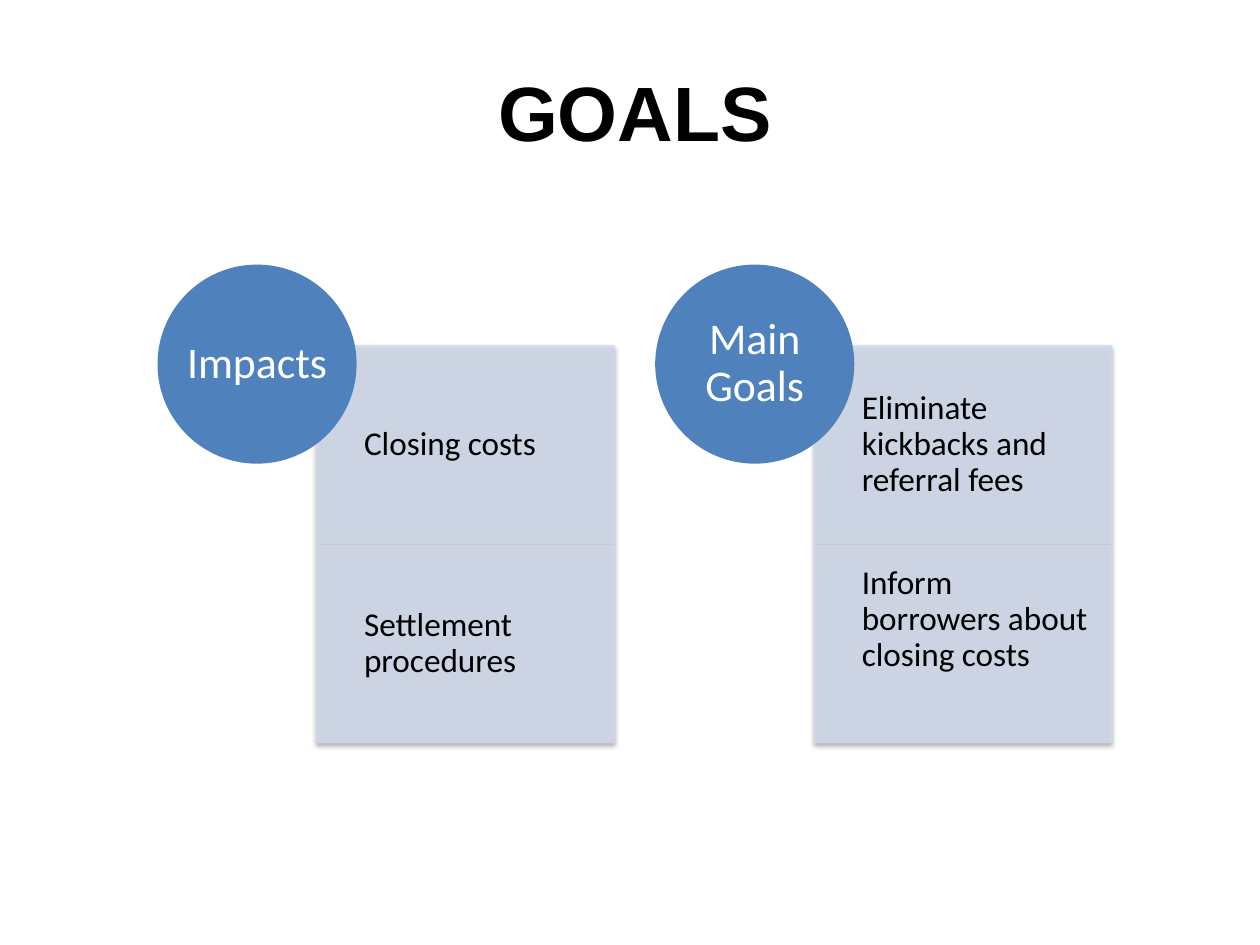
from dataclasses import dataclass

from lxml import etree
from pptx import Presentation
from pptx.dml.color import RGBColor
from pptx.enum import shapes, text
from pptx.oxml import ns
from pptx.util import Inches, Pt

BLACK = RGBColor(0x00, 0x00, 0x00)
WHITE = RGBColor(0xFF, 0xFF, 0xFF)
BLUE = RGBColor(0x4F, 0x81, 0xBD)
PALE_BLUE = RGBColor(0xD0, 0xD8, 0xE8)

CIRCLE_TOP = 2.1
CIRCLE_SIZE = 1.58
CARD_OFFSET = 1.26
CARD_TOP = 2.74
CARD_W, CARD_H = 2.37, 1.58
FIRST_LEFT, COLUMN_STEP = 1.25, 3.95


@dataclass
class Card:
    label: str
    bottom_inset: float = 0.15


@dataclass
class Column:
    heading: str
    cards: list[Card]


COLUMNS = [
    Column("Impacts", [Card("Closing costs"), Card("Settlement procedures")]),
    Column("Main Goals", [
        Card("Eliminate kickbacks and referral fees"),
        Card("Inform borrowers about closing costs", bottom_inset=0.53),
    ]),
]


def write(sp, words: str, *, size: float, color: RGBColor = BLACK,
          font: str = "Calibri", bold: bool = False,
          align=text.PP_ALIGN.CENTER, spacing: float = 0.9,
          insets: tuple = (0, 0, 0, 0)) -> None:
    """Fill a shape with one paragraph; insets are left, top, right, bottom."""
    tf = sp.text_frame
    tf.word_wrap = True
    tf.vertical_anchor = text.MSO_ANCHOR.MIDDLE
    (tf.margin_left, tf.margin_top,
     tf.margin_right, tf.margin_bottom) = map(Inches, insets)
    p = tf.paragraphs[0]
    p.alignment = align
    p.line_spacing = spacing
    r = p.add_run()
    r.text = words
    r.font.name = font
    r.font.size = Pt(size)
    r.font.bold = bold
    r.font.color.rgb = color


def add_filled(s, kind, left: float, top: float, width: float, height: float,
               color: RGBColor):
    sp = s.shapes.add_shape(kind, Inches(left), Inches(top),
                            Inches(width), Inches(height))
    sp.shadow.inherit = False
    sp.fill.solid()
    sp.fill.fore_color.rgb = color
    sp.line.fill.background()
    return sp


def set_alpha(color_element, percent: int) -> None:
    alpha = etree.SubElement(color_element, ns.qn("a:alpha"))
    alpha.set("val", str(percent * 1000))


def add_drop_shadow(sp) -> None:
    effects = sp._element.spPr.find(ns.qn("a:effectLst"))
    shadow = etree.SubElement(
        effects, ns.qn("a:outerShdw"), blurRad=str(Pt(3.1)),
        dist=str(Pt(1.8)), dir=str(90 * 60000), rotWithShape="0")
    color = etree.SubElement(shadow, ns.qn("a:srgbClr"), val=str(BLACK))
    set_alpha(color, 35)


def draw_card(s, card: Card, left: float, top: float) -> None:
    sp = add_filled(s, shapes.MSO_SHAPE.RECTANGLE, left, top,
                    CARD_W, CARD_H, PALE_BLUE)
    set_alpha(sp._element.spPr.find(".//" + ns.qn("a:srgbClr")), 90)
    add_drop_shadow(sp)
    write(sp, card.label, size=19, align=text.PP_ALIGN.LEFT,
          insets=(0.38, 0.15, 0.15, card.bottom_inset))


def draw_column(s, column: Column, left: float) -> None:
    for row, card in enumerate(column.cards):
        draw_card(s, card, left + CARD_OFFSET, CARD_TOP + row * CARD_H)
    circle = add_filled(s, shapes.MSO_SHAPE.OVAL, left, CIRCLE_TOP,
                        CIRCLE_SIZE, CIRCLE_SIZE, BLUE)
    write(circle, column.heading, size=25, color=WHITE)


def main() -> None:
    prs = Presentation()
    prs.slide_width, prs.slide_height = Inches(10), Inches(7.5)
    s = prs.slides.add_slide(prs.slide_layouts[6])

    title = s.shapes.add_textbox(Inches(0.58), Inches(0.42),
                                 Inches(8.92), Inches(0.92))
    write(title, "GOALS", size=44, font="Arial", bold=True, spacing=1.0)

    for i, column in enumerate(COLUMNS):
        draw_column(s, column, FIRST_LEFT + i * COLUMN_STEP)

    prs.save("out.pptx")


if __name__ == "__main__":
    main()
